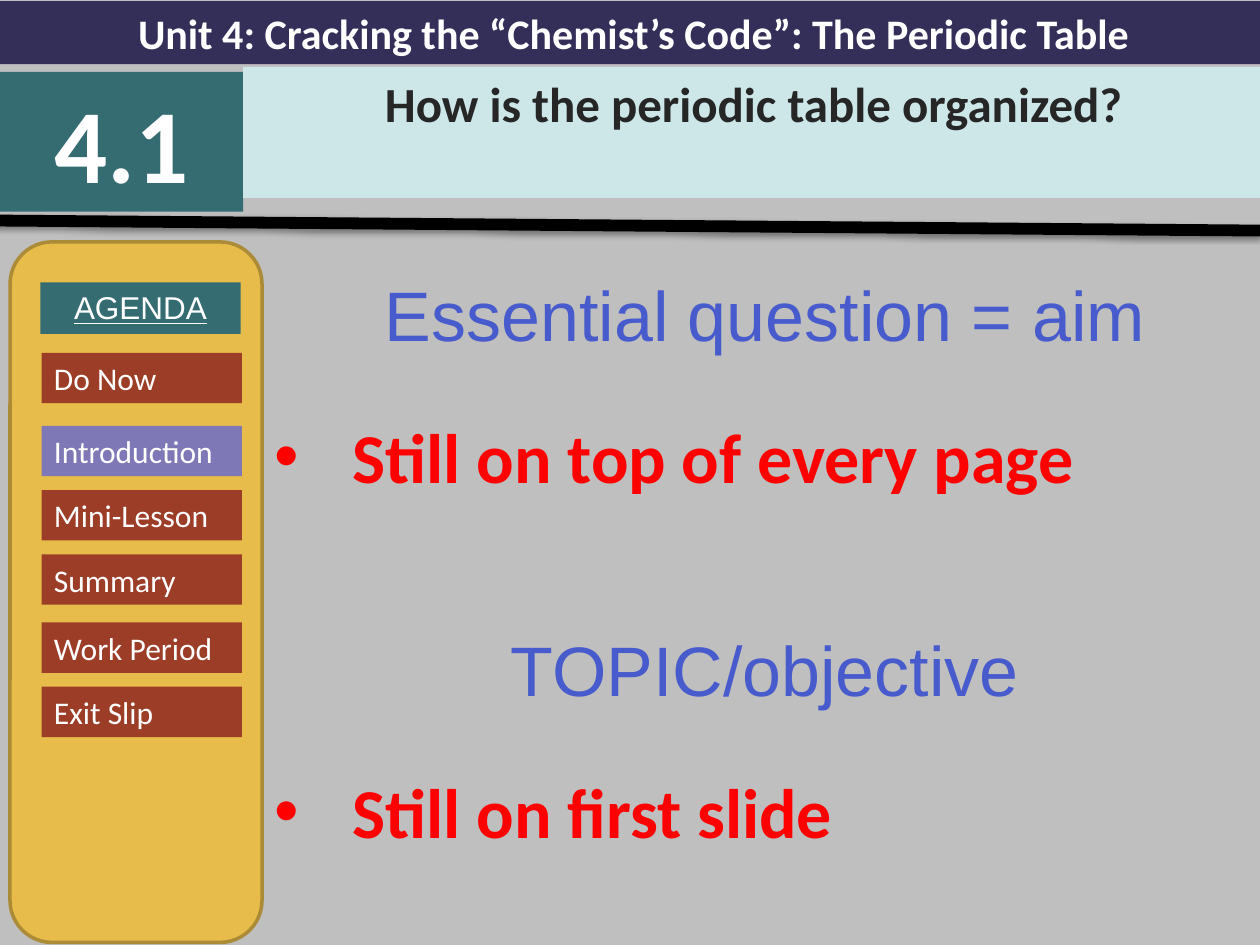
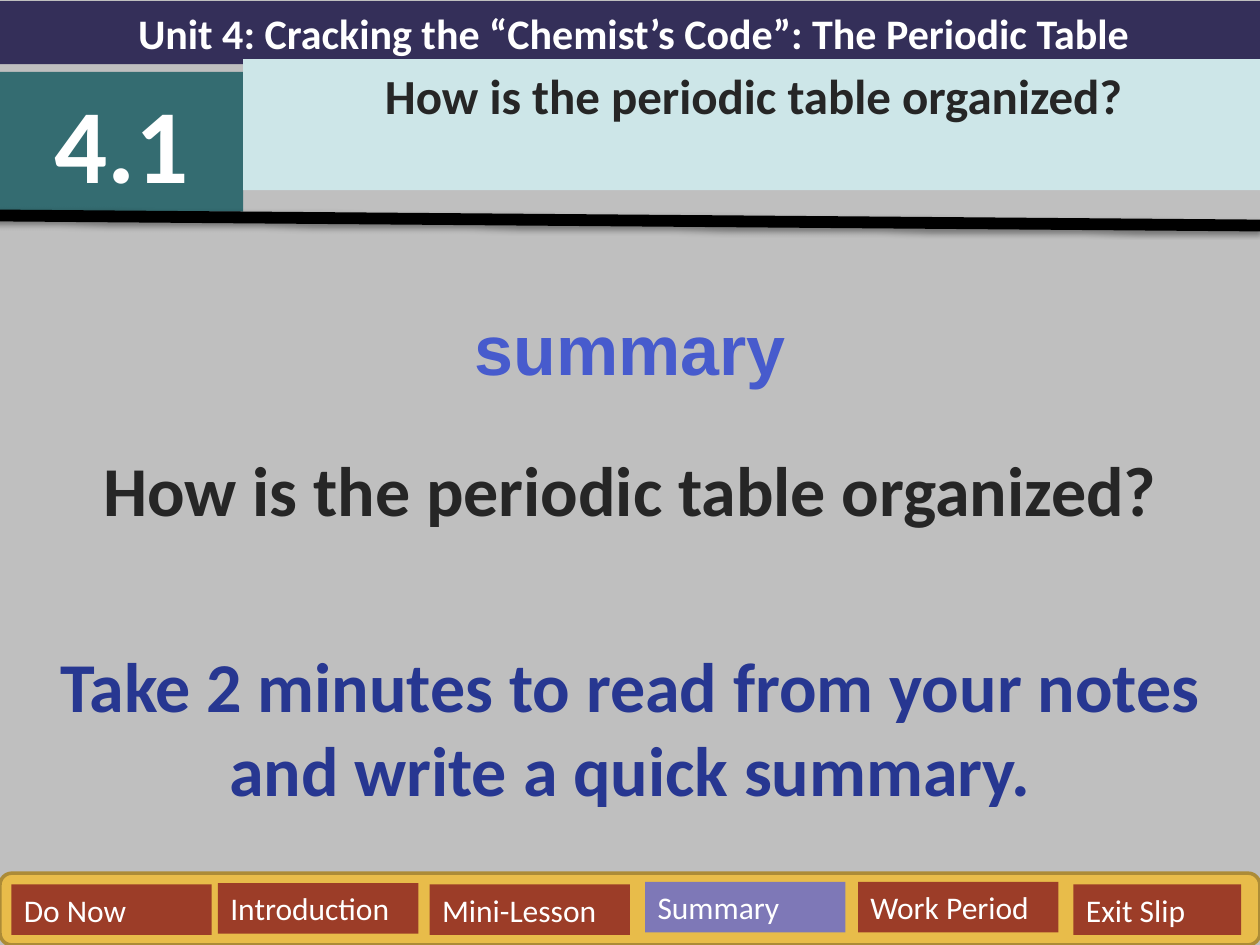
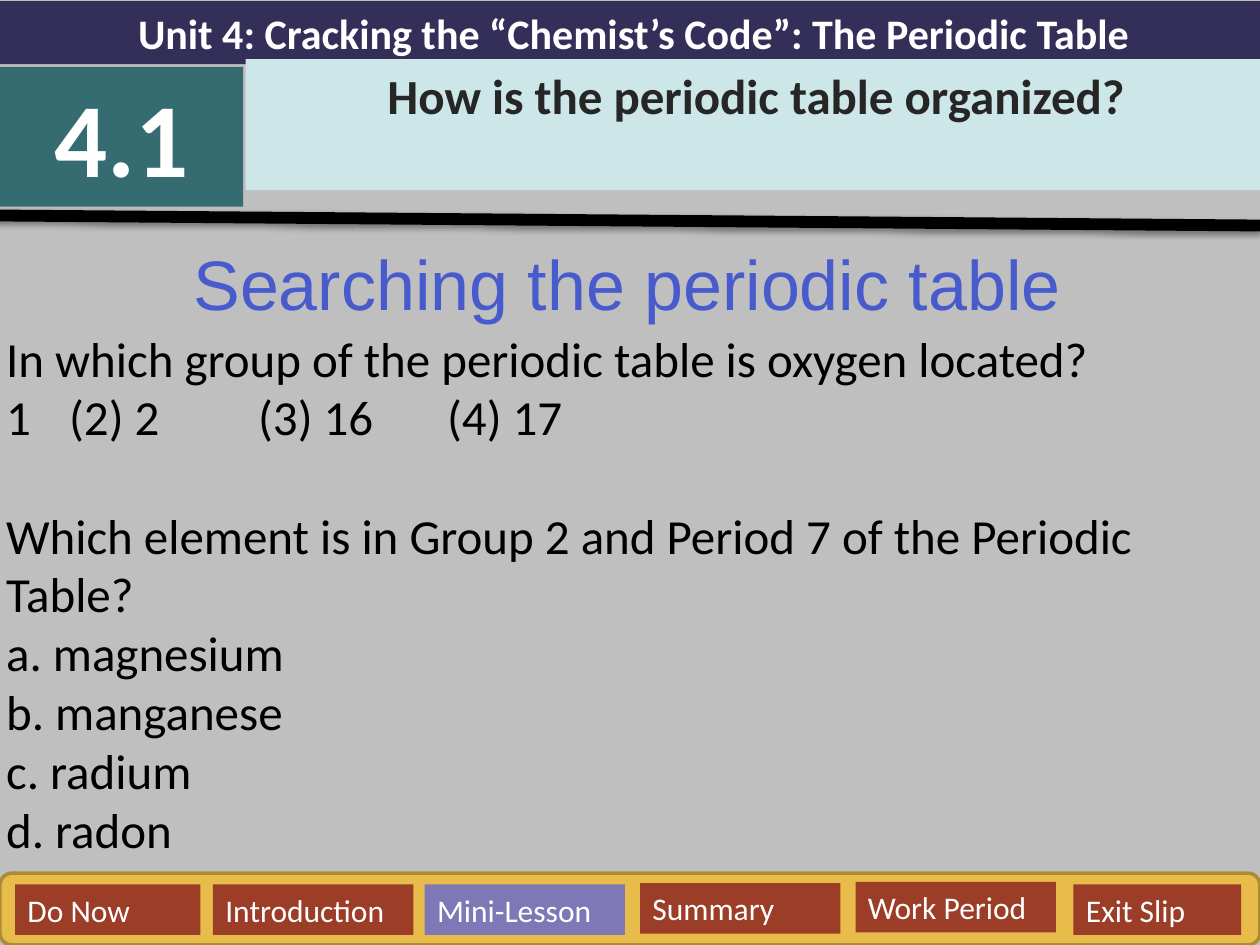
"""Builds three lesson slides on how the periodic table is organized."""
from lxml import etree
from pptx import Presentation
from pptx.dml.color import RGBColor
from pptx.enum.shapes import MSO_CONNECTOR, MSO_SHAPE
from pptx.enum.text import MSO_ANCHOR, MSO_AUTO_SIZE, PP_ALIGN
from pptx.oxml import parse_xml
from pptx.oxml.ns import nsdecls, qn
from pptx.util import Inches, Pt

RECTANGLE, ROUNDED = MSO_SHAPE.RECTANGLE, MSO_SHAPE.ROUNDED_RECTANGLE
STRAIGHT = MSO_CONNECTOR.STRAIGHT
LEFT, CENTER = PP_ALIGN.LEFT, PP_ALIGN.CENTER
TOP = MSO_ANCHOR.TOP
NO_AUTOFIT = MSO_AUTO_SIZE.NONE
TITLE_ONLY = 5

GRAY, INDIGO, TEAL, PALE = "BFBFBF", "342F59", "346C71", "CDE6E8"
GOLD, GOLD_EDGE, RUST, LILAC = "E8BC4A", "AC8B37", "9C3D28", "7E78B7"
WHITE, BLACK, CHARCOAL = "FFFFFF", "000000", "262626"
BLUE, NAVY, RED = "475BCD", "273791", "FF0000"

UNIT = "Unit 4: Cracking the “Chemist’s Code”: The Periodic Table"
LESSON = "4.1"
QUESTION = "How is the periodic table organized?"
STEPS = ["Do Now", "Introduction", "Mini-Lesson", "Summary", "Work Period", "Exit Slip"]

HEADING = {"size": 40, "font": "Arial", "color": BLUE, "align": CENTER}
POINT = {"size": 40, "color": RED, "bold": True, "line": 1.5, "before": 9, "bullet": True}
CLOSING = {"size": 40, "bold": True, "align": CENTER}
PLAIN = {"size": 28, "color": BLACK}

SLIDES = [
    {
        "lesson_top": 0.57, "question": (1.93, 0.53), "rule_top": 1.75,
        "panel": (0.08, 1.92, 2, 5.56), "agenda": (0.32, 2.24, 1.59, 0.41),
        "current": "Introduction",
        "steps": [(0.33, top, 1.59) for top in (2.8, 3.38, 3.89, 4.4, 4.94, 5.45)],
        "body": (2.08, 2.04, 7.98, 5.46),
        "text": [
            ("Essential question = aim", {**HEADING, "line": 1.1, "before": 4}),
            ("Still on top of every page", POINT),
            ("TOPIC/objective", {**HEADING, "line": 1.1, "before": 69}),
            ("Still on first slide", POINT),
        ],
    },
    {
        "lesson_top": 0.57, "question": (1.93, 0.47), "rule_top": 1.71,
        "panel": (0, 6.93, 10, 0.57), "current": "Summary",
        "steps": [(0.09, 7.02, 1.59), (1.73, 7.01, 1.59), (3.41, 7.02, 1.59),
                  (5.12, 7, 1.59), (6.81, 7, 1.59), (8.52, 7.02, 1.33)],
        "body": (0, 2.04, 10, 4.97),
        "text": [
            ("summary", {**HEADING, "bold": True, "line": 1.5, "before": 4}),
            (QUESTION, {**CLOSING, "color": CHARCOAL, "line": 1.5, "before": 9}),
            ("Take 2 minutes to read from your notes and write a quick summary.",
             {**CLOSING, "color": NAVY, "before": 64}),
        ],
    },
    {
        "lesson_top": 0.53, "question": (1.95, 0.47), "rule_top": 1.71,
        "panel": (0, 6.93, 10, 0.57), "current": "Mini-Lesson",
        "steps": [(0.12, 7.02, 1.47), (1.69, 7.02, 1.59), (3.37, 7.02, 1.59),
                  (5.08, 7.01, 1.59), (6.79, 7, 1.59), (8.52, 7.02, 1.33)],
        "body": (-0.05, 1.86, 10.05, 5.07),
        "text": [
            ("Searching the periodic table", {**HEADING, "before": 2}),
            ("In which group of the periodic table is oxygen located?",
             {**PLAIN, "before": 2}),
            ("1\t(2) 2\t(3) 16\t(4) 17", {**PLAIN, "tabs": (0.5, 2, 3.5)}),
            ("Which element is in Group 2 and Period 7 of the Periodic Table?",
             {**PLAIN, "before": 34}),
            ("a. magnesium", PLAIN),
            ("b. manganese", PLAIN),
            ("c. radium", PLAIN),
            ("d. radon", PLAIN),
        ],
    },
]


def paint(target, color):
    """Gives a fill a solid colour."""
    target.solid()
    target.fore_color.rgb = RGBColor.from_string(color)


def format_para(para, size, color, font="Calibri", bold=False, underline=False,
                align=LEFT, line=1.0, before=0, bullet=False, tabs=()):
    """Formats a paragraph and its runs."""
    para.alignment = align
    para.line_spacing = line
    para.space_before = Pt(before)
    for span in para.runs:
        span.font.name = font
        span.font.size = Pt(size)
        span.font.bold = bold
        span.font.underline = underline
        span.font.color.rgb = RGBColor.from_string(color)
    properties = para._p.get_or_add_pPr()
    if bullet:
        properties.set("marL", str(Inches(0.62)))
        properties.set("indent", str(-Inches(0.62)))
        etree.SubElement(properties, qn("a:buFont")).set("typeface", "Arial")
        etree.SubElement(properties, qn("a:buChar")).set("char", "•")
    if tabs:
        tab_list = etree.SubElement(properties, qn("a:tabLst"))
        for stop in tabs:
            tab = etree.SubElement(tab_list, qn("a:tab"))
            tab.set("pos", str(Inches(stop)))
            tab.set("algn", "l")


def write(box, items):
    """Fills a box with top-anchored paragraphs of (text, style)."""
    frame = box.text_frame
    frame.word_wrap = True
    frame.auto_size = NO_AUTOFIT
    frame.vertical_anchor = TOP
    frame.text = "\n".join(text for text, style in items)
    for para, (text, style) in zip(frame.paragraphs, items):
        format_para(para, **style)


def add_block(slide, place, fill, kind=RECTANGLE, edge=None):
    """Adds a filled shape without shadow."""
    block = slide.shapes.add_shape(kind, *map(Inches, place))
    block.shadow.inherit = False
    paint(block.fill, fill)
    if edge:
        paint(block.line.fill, edge)
        block.line.width = Pt(2)
    else:
        block.line.fill.background()
    return block


def add_label(slide, place, fill, text, size, **style):
    """Adds a filled rectangle with one line of white text."""
    block = add_block(slide, place, fill)
    write(block, [(text, {"size": size, "color": WHITE, **style})])


def add_rule(slide, top):
    """Adds the thick, slightly sloping black line with its soft shadow."""
    rule = slide.shapes.add_connector(
        STRAIGHT, *map(Inches, (-0.05, top, 10, top + 0.08)))
    paint(rule.line.fill, BLACK)
    rule.line.width = Pt(6.75)
    rule._element.spPr.append(parse_xml(
        f'<a:effectLst {nsdecls("a")}><a:outerShdw blurRad="{Pt(3.1)}" dist="{Pt(1.6)}" '
        f'dir="5400000" rotWithShape="0"><a:srgbClr val="{BLACK}"><a:alpha val="38000"/>'
        '</a:srgbClr></a:outerShdw></a:effectLst>'))


def add_header(slide, page):
    """Adds the unit band, lesson number, question title and rule."""
    add_label(slide, (0, 0.01, 10.06, 0.5), INDIGO, UNIT, 24, bold=True, align=CENTER)
    add_label(slide, (0, page["lesson_top"], 1.93, 1.11), TEAL, LESSON, 60,
              bold=True, align=CENTER)
    title = slide.shapes.title
    title.left, title.top = map(Inches, page["question"])
    title.width, title.height = Inches(8.1), Inches(1.04)
    paint(title.fill, PALE)
    write(title, [(QUESTION, {"size": 28, "color": CHARCOAL, "bold": True, "align": CENTER})])
    slide.shapes._spTree.append(title._element)
    add_rule(slide, page["rule_top"])


def add_agenda(slide, page):
    """Adds the gold panel with the lesson steps, the current one in lilac."""
    add_block(slide, page["panel"], GOLD, ROUNDED, GOLD_EDGE)
    if "agenda" in page:
        add_label(slide, page["agenda"], TEAL, "AGENDA", 18, font="Arial",
                  underline=True, align=CENTER)
    for step, place in zip(STEPS, page["steps"]):
        fill = LILAC if step == page["current"] else RUST
        add_label(slide, (*place, 0.4), fill, step, 18)


def main():
    """Builds and saves the deck."""
    deck = Presentation()
    deck.slide_width, deck.slide_height = Inches(10), Inches(7.5)
    for page in SLIDES:
        slide = deck.slides.add_slide(deck.slide_layouts[TITLE_ONLY])
        paint(slide.background.fill, GRAY)
        add_header(slide, page)
        add_agenda(slide, page)
        body = slide.shapes.add_textbox(*map(Inches, page["body"]))
        write(body, page["text"])
    deck.save("out.pptx")


if __name__ == "__main__":
    main()
